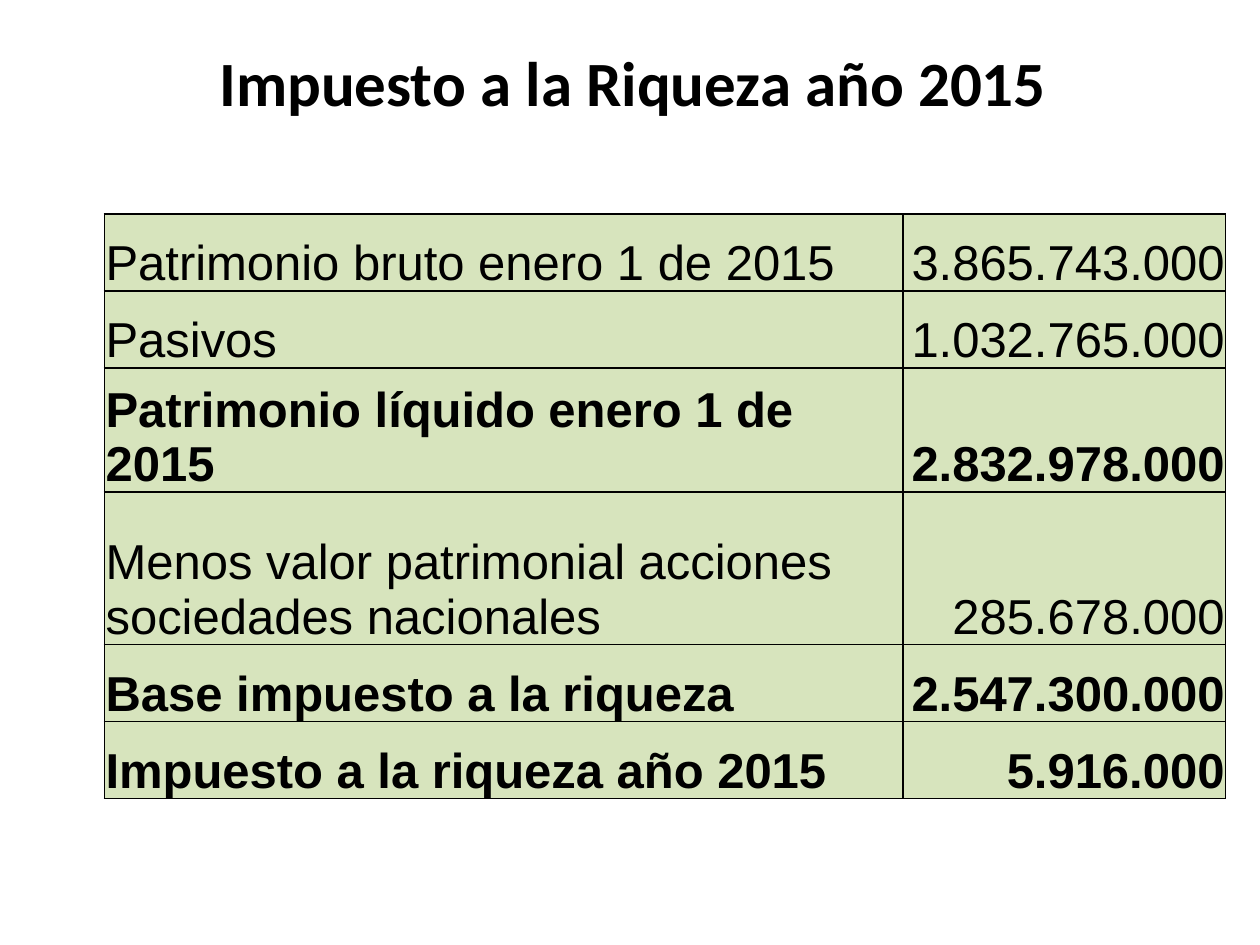
from dataclasses import dataclass

from lxml.etree import SubElement
from pptx import Presentation
from pptx.dml.color import RGBColor as Color
from pptx.enum.text import MSO_ANCHOR as Anchor, MSO_AUTO_SIZE as AutoSize, PP_ALIGN as Align
from pptx.oxml.ns import qn
from pptx.util import Pt


@dataclass(frozen=True)
class Theme:
    ink: str = "000000"
    cell_fill: str = "D7E4BD"
    title_font: str = "Calibri"
    table_font: str = "Arial"
    title_size: int = 36
    table_size: int = 28
    border_width: int = 1


class SlideBuilder:
    def __init__(self, deck, theme):
        self.theme = theme
        self.slide = deck.slides.add_slide(deck.slide_layouts[5])

    def span(self, para, text, font, size, bold):
        run = para.add_run()
        run.text = text
        run.font.name = font
        run.font.size = Pt(size)
        run.font.bold = bold
        run.font.color.rgb = Color.from_string(self.theme.ink)

    def title(self, text, left, top, width, height):
        box = self.slide.shapes.title
        box.left, box.top, box.width, box.height = map(Pt, (left, top, width, height))
        frame = box.text_frame
        frame.word_wrap = False
        frame.auto_size = AutoSize.SHAPE_TO_FIT_TEXT
        frame.vertical_anchor = Anchor.TOP
        para = frame.paragraphs[0]
        para.alignment = Align.CENTER
        self.span(para, text, self.theme.title_font, self.theme.title_size, True)

    def borders(self, cell):
        properties = cell._tc.get_or_add_tcPr()
        for side in ("lnL", "lnR", "lnT", "lnB"):
            line = SubElement(properties, qn(f"a:{side}"), w=str(Pt(self.theme.border_width)))
            fill = SubElement(line, qn("a:solidFill"))
            SubElement(fill, qn("a:srgbClr"), val=self.theme.ink)

    def cell(self, cell, text, align, bold):
        self.borders(cell)
        cell.fill.solid()
        cell.fill.fore_color.rgb = Color.from_string(self.theme.cell_fill)
        cell.vertical_anchor = Anchor.BOTTOM
        cell.margin_left = cell.margin_right = cell.margin_top = Pt(0.75)
        cell.margin_bottom = 0
        para = cell.text_frame.paragraphs[0]
        para.alignment = align
        self.span(para, text, self.theme.table_font, self.theme.table_size, bold)

    def table(self, rows, left, top, widths, heights):
        frame = self.slide.shapes.add_table(
            len(rows), len(widths), Pt(left), Pt(top), Pt(sum(widths)), Pt(sum(heights)))
        table = frame.table
        table.first_row = table.horz_banding = False
        for column, width in zip(table.columns, widths):
            column.width = Pt(width)
        for index, (label, amount, bold) in enumerate(rows):
            table.rows[index].height = Pt(heights[index])
            self.cell(table.cell(index, 0), label, Align.LEFT, bold)
            self.cell(table.cell(index, 1), amount, Align.RIGHT, bold)


# Label, amount, bold
TAX_ROWS = [
    ("Patrimonio bruto enero 1 de 2015", "3.865.743.000", False),
    ("Pasivos", "1.032.765.000", False),
    ("Patrimonio líquido enero 1 de 2015", "2.832.978.000", True),
    ("Menos valor patrimonial acciones sociedades nacionales", "285.678.000", False),
    ("Base impuesto a la riqueza", "2.547.300.000", True),
    ("Impuesto a la riqueza año 2015", "5.916.000", True),
]


def main():
    deck = Presentation()
    deck.slide_width, deck.slide_height = Pt(720), Pt(540)
    page = SlideBuilder(deck, Theme())

    # Heading
    page.title("Impuesto a la Riqueza año 2015", 116, 21, 491.5, 51)

    # Wealth tax calculation
    single, double, tall = 44, 70.8, 87.2
    page.table(TAX_ROWS, 59.6, 122.4, widths=(456.3, 184.5),
               heights=(single, single, double, tall, single, single))

    deck.save("out.pptx")


if __name__ == "__main__":
    main()
